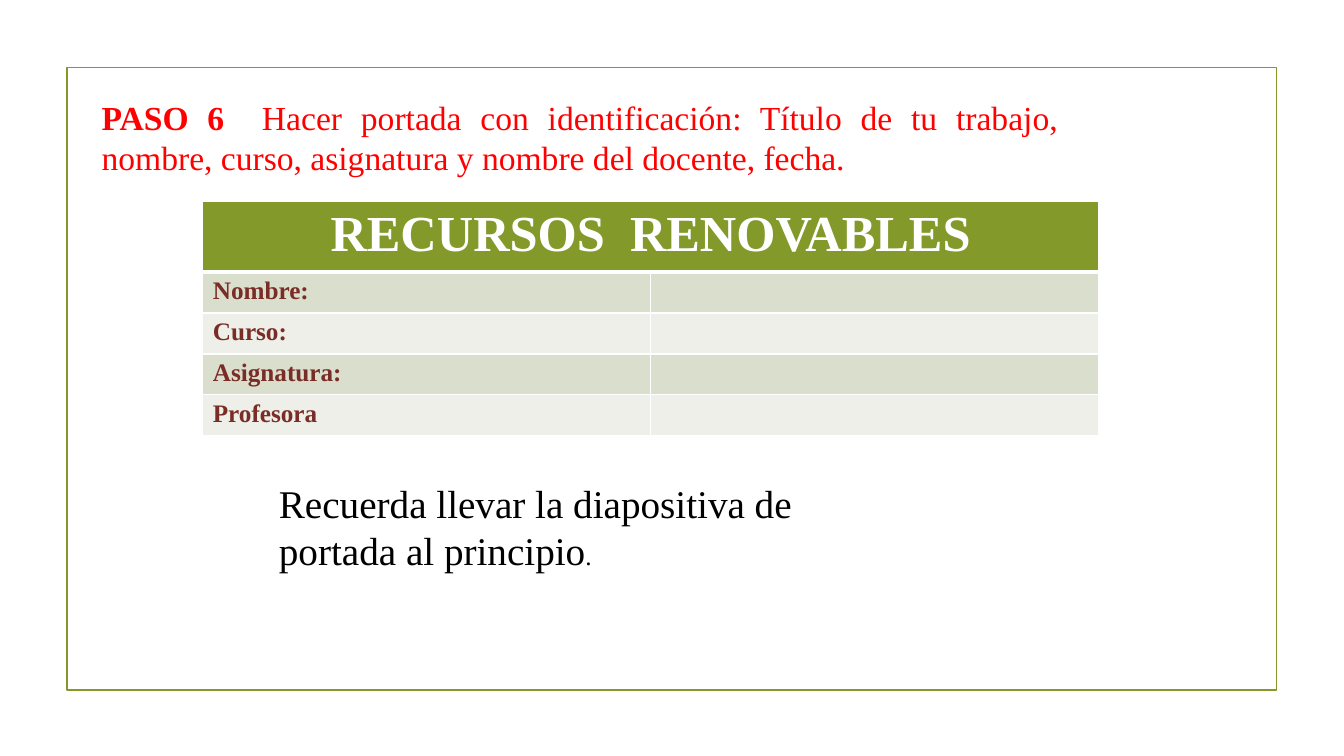
from dataclasses import dataclass

from lxml.etree import SubElement
from pptx import Presentation
from pptx.dml.color import RGBColor
from pptx.enum.shapes import MSO_SHAPE as Shape
from pptx.enum.text import MSO_AUTO_SIZE as AutoSize, PP_ALIGN as Align
from pptx.oxml.ns import qn
from pptx.util import Cm, Pt


@dataclass(frozen=True)
class Theme:
    font: str = "Times New Roman"
    green: str = "83992A"
    bands: tuple = ("D9DECD", "EDEFE8")
    white: str = "FFFFFF"
    black: str = "000000"
    red: str = "FF0000"
    brown: str = "7A2D26"
    heading: int = 36
    reminder: int = 28
    step: int = 24
    label: int = 18


THEME = Theme()


def rgb(value):
    return RGBColor.from_string(value)


def add_run(paragraph, text, size, color, bold=False):
    run = paragraph.add_run()
    run.text = text
    run.font.name = THEME.font
    run.font.size = Pt(size)
    run.font.bold = bold
    run.font.color.rgb = rgb(color)


def add_frame(slide, left, top, width, height):
    shape = slide.shapes.add_shape(Shape.RECTANGLE, Cm(left), Cm(top), Cm(width), Cm(height))
    shape.shadow.inherit = False
    shape.fill.background()
    shape.line.color.rgb = rgb(THEME.green)
    shape.line.width = Pt(1.25)


def add_text(slide, left, top, width, height, alignment):
    shape = slide.shapes.add_textbox(Cm(left), Cm(top), Cm(width), Cm(height))
    shape.text_frame.word_wrap = True
    shape.text_frame.auto_size = AutoSize.SHAPE_TO_FIT_TEXT
    paragraph = shape.text_frame.paragraphs[0]
    paragraph.alignment = alignment
    return paragraph


def style_cell(cell, fill, top=1, bottom=1):
    properties = cell._tc.get_or_add_tcPr()
    for side, width in (("L", 1), ("R", 1), ("T", top), ("B", bottom)):
        line = SubElement(properties, qn(f"a:ln{side}"), w=str(Pt(width)))
        SubElement(SubElement(line, qn("a:solidFill")), qn("a:srgbClr"), val=THEME.white)
    cell.fill.solid()
    cell.fill.fore_color.rgb = rgb(fill)


def add_cover_table(slide, title, labels):
    heading_height, row_height, width = 1.75, 1.03, 22.58
    frame = slide.shapes.add_table(
        len(labels) + 1, 2, Cm(5.11), Cm(5.08), Cm(width),
        Cm(heading_height + row_height * len(labels)),
    )
    table = frame.table
    table.first_row = False
    table.horz_banding = False
    table.rows[0].height = Cm(heading_height)
    for cell in table.rows[0].cells:
        style_cell(cell, THEME.green, bottom=3)
    heading = table.cell(0, 0)
    heading.merge(table.cell(0, 1))
    paragraph = heading.text_frame.paragraphs[0]
    paragraph.alignment = Align.CENTER
    add_run(paragraph, title, THEME.heading, THEME.white, True)
    for index, label in enumerate(labels):
        row = table.rows[index + 1]
        row.height = Cm(row_height)
        for cell in row.cells:
            style_cell(cell, THEME.bands[index % 2], top=1 if index else 3)
        add_run(row.cells[0].text_frame.paragraphs[0], label, THEME.label, THEME.brown, True)


def main():
    presentation = Presentation()
    presentation.slide_width = Cm(33.87)
    presentation.slide_height = Cm(19.05)
    slide = presentation.slides.add_slide(presentation.slide_layouts[6])

    add_frame(slide, 1.69, 1.7, 30.48, 15.68)

    step = add_text(slide, 2.31, 2.31, 24.61, 2.31, Align.JUSTIFY)
    add_run(step, "PASO 6  ", THEME.step, THEME.red, True)
    add_run(
        step,
        "Hacer portada con identificación: Título de tu trabajo, "
        "nombre, curso, asignatura y nombre del docente, fecha.",
        THEME.step, THEME.red,
    )

    add_cover_table(
        slide, "RECURSOS  RENOVABLES", ("Nombre:", "Curso:", "Asignatura:", "Profesora")
    )

    reminder = add_text(slide, 6.78, 11.96, 16.33, 2.64, Align.LEFT)
    add_run(
        reminder, "Recuerda llevar la diapositiva de portada al principio",
        THEME.reminder, THEME.black,
    )
    add_run(reminder, ".", THEME.label, THEME.black)

    presentation.save("out.pptx")


if __name__ == "__main__":
    main()
